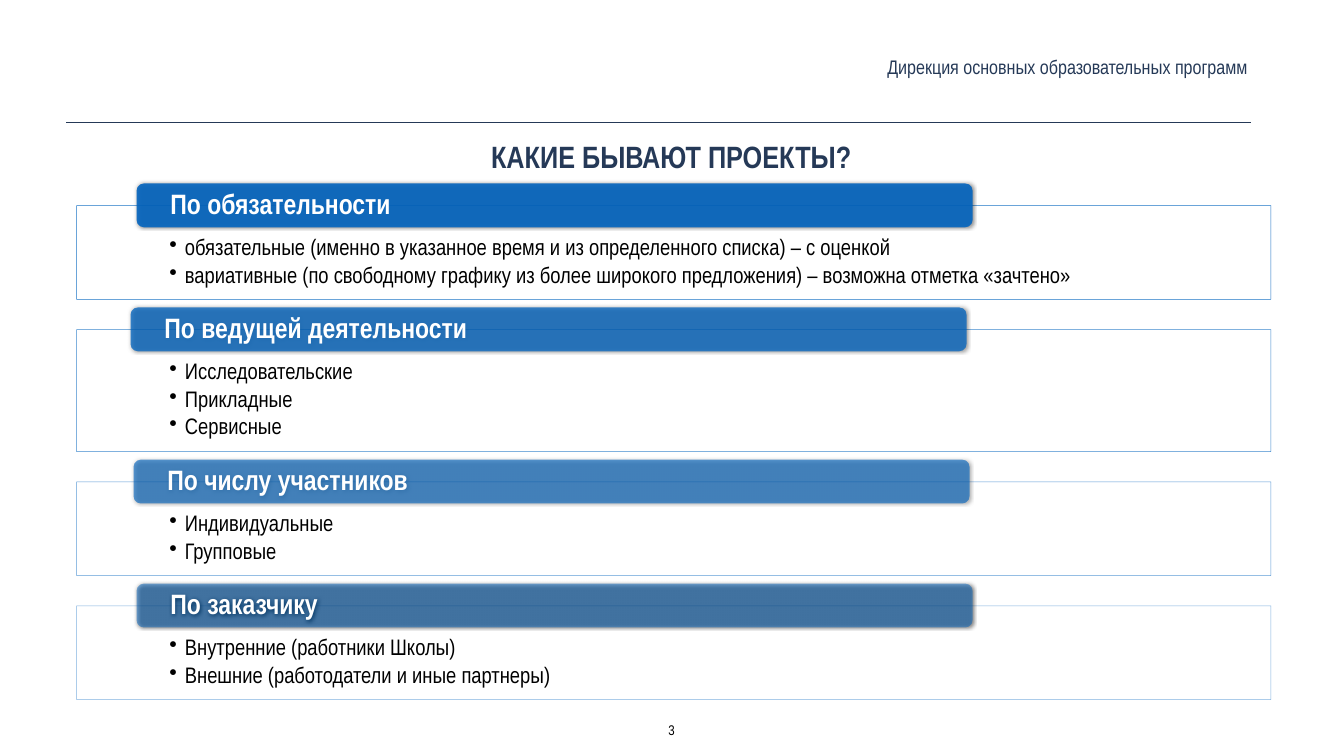
"""Build the slide that lists the kinds of projects."""
import pptx
import pptx.dml.color
import pptx.enum.shapes
import pptx.enum.text
import pptx.oxml
import pptx.oxml.ns
import pptx.util

Inches, Pt = pptx.util.Inches, pptx.util.Pt
RGB = pptx.dml.color.RGBColor.from_string
SHAPE = pptx.enum.shapes.MSO_SHAPE
ALIGN = pptx.enum.text.PP_ALIGN
ANCHOR = pptx.enum.text.MSO_ANCHOR
AUTO = pptx.enum.text.MSO_AUTO_SIZE

TITLE = "КАКИЕ БЫВАЮТ ПРОЕКТЫ?"
DEPARTMENT = "Дирекция основных образовательных программ"
PAGE = "3"
GROUPS = [
    ("По обязательности", 2.71, [
        "обязательные (именно в указанное время и из определенного списка) – с оценкой",
        "вариативные (по свободному графику из более широкого предложения) – возможна отметка «зачтено»",
    ]),
    ("По ведущей деятельности", 2.59, ["Исследовательские", "Прикладные", "Сервисные"]),
    ("По числу участников", 2.65, ["Индивидуальные", "Групповые"]),
    ("По заказчику", 2.71, [
        "Внутренние (работники Школы)",
        "Внешние (работодатели и иные партнеры)",
    ]),
]

THEME = {
    "font": "Arial Narrow",
    "navy": "253957", "blue": "0365C0", "white": "FFFFFF", "black": "000000",
    "title": 44, "heading": 40, "item": 32, "department": 28, "page": 20,
}
FRAME_LEFT, FRAME_TOP, FRAME_WIDTH = 1.52, 4.08, 23.7
FRAME_BASE, ITEM_HEIGHT, FRAME_GAP = 0.74, 0.56, 0.6
BAR_WIDTH, BAR_HEIGHT, BAR_RISE = 16.59, 0.87, 0.44
ALPHA_FIRST, ALPHA_LAST = 90, 50
SMALL_INSETS = (0.08, 0.08, 0.08, 0.08)


def set_all(obj, values):
    for name, value in values.items():
        setattr(obj, name, value)


def write(sp, lines, size, color, bold=False, insets=SMALL_INSETS,
          frame=None, para=None):
    tf = sp.text_frame
    sides = ("margin_left", "margin_top", "margin_right", "margin_bottom")
    set_all(tf, dict(zip(sides, map(Inches, insets))))
    set_all(tf, {"word_wrap": True, "auto_size": AUTO.NONE,
                 "vertical_anchor": ANCHOR.TOP, **(frame or {})})
    for i, line in enumerate(lines):
        p = tf.paragraphs[0] if i == 0 else tf.add_paragraph()
        set_all(p, para or {})
        r = p.add_run()
        r.text = line
        set_all(r.font, {"name": THEME["font"], "size": Pt(THEME[size]), "bold": bold})
        r.font.color.rgb = RGB(THEME[color])


def add_xml(parent, xml):
    head, tail = xml.split(" ", 1)
    node = pptx.oxml.parse_xml(f"{head} {pptx.oxml.ns.nsdecls('a')} {tail}")
    parent.append(node)


def set_alpha(sp, where, percent):
    color = sp._element.xpath(f"p:spPr/{where}/a:srgbClr")[0]
    add_xml(color, f'<a:alpha val="{round(percent * 1000)}"/>')


def add_box(slide, kind, box, fill, alpha):
    sp = slide.shapes.add_shape(kind, *map(Inches, box))
    sp.shadow.inherit = False
    sp.fill.solid()
    sp.fill.fore_color.rgb = RGB(THEME[fill])
    set_alpha(sp, "a:solidFill", alpha)
    return sp


def add_frame(slide, top, height, items, alpha):
    sp = add_box(slide, SHAPE.RECTANGLE, (FRAME_LEFT, top, FRAME_WIDTH, height), "white", 90)
    sp.line.color.rgb = RGB(THEME["blue"])
    sp.line.width = Pt(0.75)
    set_alpha(sp, "a:ln/a:solidFill", alpha)
    write(sp, items, "item", "black", insets=(1.84, 0.61, 1.84, 0.25),
          para={"alignment": ALIGN.LEFT, "level": 1, "line_spacing": 0.9,
                "space_after": Pt(0.15 * THEME["item"])})
    for p in sp.text_frame.paragraphs:
        pPr = p._p.get_or_add_pPr()
        pPr.set("marL", str(Inches(0.31)))
        pPr.set("indent", str(-Inches(0.31)))
        add_xml(pPr, '<a:buChar char="•"/>')


def add_bar(slide, left, top, heading, alpha):
    sp = add_box(slide, SHAPE.ROUNDED_RECTANGLE, (left, top, BAR_WIDTH, BAR_HEIGHT), "blue", alpha)
    sp.line.fill.background()
    add_xml(sp._element.xpath("p:spPr/a:effectLst")[0],
            f'<a:outerShdw blurRad="{Pt(5)}" dist="{Pt(1)}" dir="0" rotWithShape="0">'
            f'<a:srgbClr val="{THEME["black"]}"><a:alpha val="50000"/></a:srgbClr></a:outerShdw>')
    write(sp, [heading], "heading", "white", True, (0.63, 0, 0.63, 0),
          {"vertical_anchor": ANCHOR.MIDDLE},
          {"alignment": ALIGN.LEFT, "line_spacing": 0.9})


def add_header(slide):
    title = slide.shapes.title
    places = zip(("left", "top", "width", "height"), (0.29, 2.65, 26.07, 0.76))
    set_all(title, {name: Inches(value) for name, value in places})
    write(title, [TITLE], "title", "navy", True, para={"alignment": ALIGN.CENTER})

    rule = slide.shapes.add_connector(
        pptx.enum.shapes.MSO_CONNECTOR.STRAIGHT, *map(Inches, (1.31, 2.42, 24.83, 2.42)))
    rule.line.color.rgb = RGB(THEME["navy"])
    rule.line.width = Pt(1)
    add_xml(rule._element.spPr, "<a:effectLst />")

    department = slide.shapes.add_textbox(*map(Inches, (12.4, 1, 12.43, 0.63)))
    write(department, [DEPARTMENT], "department", "navy",
          frame={"vertical_anchor": ANCHOR.MIDDLE}, para={"alignment": ALIGN.RIGHT})
    page = slide.shapes.add_textbox(*map(Inches, (13.17, 14.23, 0.31, 0.49)))
    write(page, [PAGE], "page", "black",
          frame={"word_wrap": False}, para={"alignment": ALIGN.CENTER})


def main():
    prs = pptx.Presentation()
    set_all(prs, {"slide_width": Inches(26.67), "slide_height": Inches(15)})
    slide = prs.slides.add_slide(prs.slide_layouts[5])
    add_header(slide)
    top = FRAME_TOP
    step = (ALPHA_LAST - ALPHA_FIRST) / (len(GROUPS) - 1)
    for i, (heading, left, items) in enumerate(GROUPS):
        alpha = ALPHA_FIRST + i * step
        height = FRAME_BASE + ITEM_HEIGHT * len(items)
        add_frame(slide, top, height, items, alpha)
        add_bar(slide, left, top - BAR_RISE, heading, alpha)
        top += height + FRAME_GAP
    prs.save("out.pptx")


if __name__ == "__main__":
    main()
